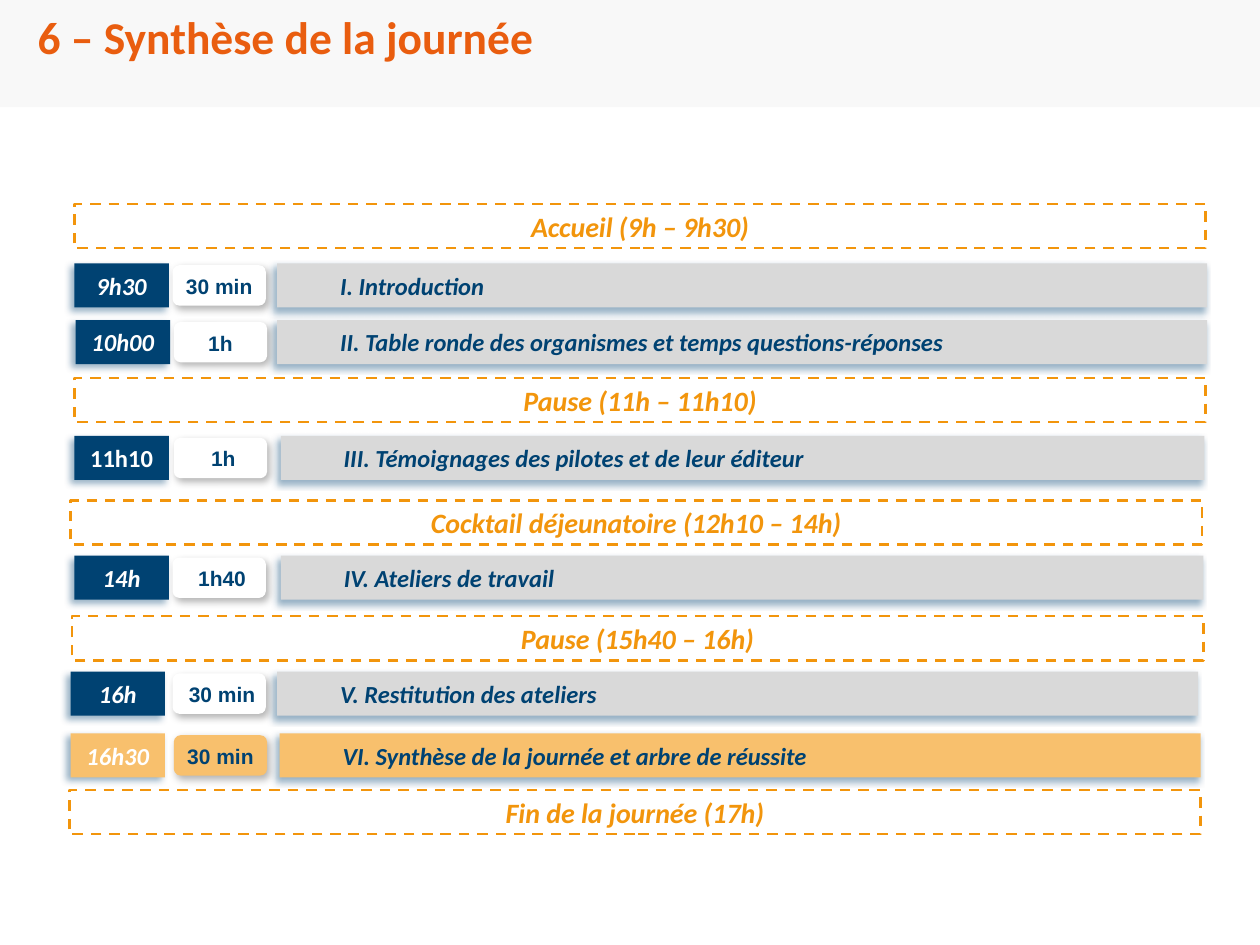
import pptx
import pptx.util
import pptx.dml.color
import pptx.enum.dml
import pptx.enum.shapes
import pptx.enum.text
import pptx.oxml
import pptx.oxml.ns

Inches, Pt = pptx.util.Inches, pptx.util.Pt
RGBColor = pptx.dml.color.RGBColor
SHAPES = pptx.enum.shapes.MSO_SHAPE
ALIGN = pptx.enum.text.PP_ALIGN
ANCHOR = pptx.enum.text.MSO_ANCHOR

NAVY = RGBColor(0x00, 0x42, 0x72)
AMBER = RGBColor(0xF2, 0x95, 0x0C)
PEACH = RGBColor(0xF8, 0xC0, 0x6D)
ORANGE = RGBColor(0xE9, 0x5D, 0x0F)
GREY = RGBColor(0xD9, 0xD9, 0xD9)
PALE = RGBColor(0xF8, 0xF8, 0xF8)
WHITE = RGBColor(0xFF, 0xFF, 0xFF)
BLACK = RGBColor(0x00, 0x00, 0x00)

# Content
TITLE = "6 – Synthèse de la journée"
# left, top, label
BREAKS = [
    (0.59, 1.62, "Accueil (9h – 9h30)"),
    (0.59, 3.00, "Pause (11h – 11h10)"),
    (0.56, 3.97, "Cocktail déjeunatoire (12h10 – 14h)"),
    (0.57, 4.89, "Pause (15h40 – 16h)"),
    (0.55, 6.27, "Fin de la journée (17h)"),
]
# top, (left, start time), (left, duration), (left, right, topic)
SESSIONS = [
    (2.09, (0.59, "9h30"), (1.37, "30 min"), (2.20, 9.58, "I. Introduction")),
    (2.54, (0.60, "10h00"), (1.38, "1h"),
     (2.20, 9.58, "II. Table ronde des organismes et temps questions-réponses")),
    (3.46, (0.59, "11h10"), (1.38, " 1h"),
     (2.23, 9.56, "III. Témoignages des pilotes et de leur éditeur")),
    (4.41, (0.59, "14h"), (1.37, " 1h40"), (2.23, 9.55, "IV. Ateliers de travail")),
    (5.33, (0.56, "16h"), (1.37, " 30 min"), (2.20, 9.51, "V. Restitution des ateliers")),
    (5.82, (0.56, "16h30"), (1.38, "30 min"),
     (2.22, 9.53, "VI. Synthèse de la journée et arbre de réussite")),
]
CURRENT = "16h30"
UPRIGHT = "11h10"

# Sizes in inches; shadows as colour, opacity %, blur pt, distance pt, angle
ROW_H, PILL_H = 0.35, 0.32
BREAK_W, TIME_W, PILL_W = 8.98, 0.75, 0.74
NAVY_SHADOW = (NAVY, 40, 4, 3, 135)
SOFT_SHADOW = (BLACK, 30, 4.5, 2.6, 53)

deck = pptx.Presentation()
deck.slide_width, deck.slide_height = Inches(10), Inches(7.5)
page = deck.slides.add_slide(deck.slide_layouts[6])


def add_block(left, top, width, height, fill=None, shadow=None, kind=SHAPES.RECTANGLE):
    box = page.shapes.add_shape(kind, *map(Inches, (left, top, width, height)))
    if fill is None:
        box.fill.background()
    else:
        box.fill.solid()
        box.fill.fore_color.rgb = fill
    box.line.fill.background()
    box.shadow.inherit = False
    if shadow:
        color, opacity, blur, distance, angle = shadow
        effects = box._element.spPr.find(pptx.oxml.ns.qn("a:effectLst"))
        effects.append(pptx.oxml.parse_xml(
            f'<a:outerShdw {pptx.oxml.ns.nsdecls("a")} blurRad="{Pt(blur)}" '
            f'dist="{Pt(distance)}" dir="{angle * 60000}" algn="ctr" rotWithShape="0">'
            f'<a:srgbClr val="{color}"><a:alpha val="{opacity * 1000}"/></a:srgbClr>'
            '</a:outerShdw>'))
    return box


def write(box, text, size, color, font="Calibri", italic=True, align=ALIGN.CENTER,
          anchor=ANCHOR.MIDDLE, wrap=True, after=3):
    box.text_frame.word_wrap = wrap
    box.text_frame.vertical_anchor = anchor
    para = box.text_frame.paragraphs[0]
    para.text = text
    para.alignment = align
    para.space_after = Pt(after)
    para.font.name, para.font.size = font, Pt(size)
    para.font.bold, para.font.italic = True, italic
    para.font.color.rgb = color
    return para


# Header band and title
add_block(0, 0, 10, 0.85, PALE)
title = page.shapes.add_textbox(*map(Inches, (0.2, 0.09, 9.62, 0.79)))
write(title, TITLE, 26, ORANGE, italic=False, align=ALIGN.LEFT,
      anchor=ANCHOR.TOP, after=0).line_spacing = 0.85

# Dashed frames for the breaks
for left, top, label in BREAKS:
    frame = add_block(left, top, BREAK_W, ROW_H)
    frame.line.color.rgb = AMBER
    frame.line.width = Pt(1.5)
    frame.line.dash_style = pptx.enum.dml.MSO_LINE.DASH
    write(frame, label, 16, AMBER)

# Sessions: start time, duration, topic
for top, (time_left, time), (pill_left, duration), (left, right, topic) in SESSIONS:
    current = time == CURRENT
    clock = add_block(time_left, top, TIME_W, ROW_H, PEACH if current else NAVY, NAVY_SHADOW)
    write(clock, time, 14, WHITE, italic=time != UPRIGHT)

    bar = add_block(left, top, right - left, ROW_H, PEACH if current else GREY, NAVY_SHADOW)
    para = write(bar, topic, 14, NAVY, align=ALIGN.LEFT)
    para._p.get_or_add_pPr().set("marL", str(Inches(0.4)))

    pill = add_block(pill_left, top + (ROW_H - PILL_H) / 2, PILL_W, PILL_H,
                     PEACH if current else WHITE, SOFT_SHADOW, SHAPES.ROUNDED_RECTANGLE)
    write(pill, duration, 12, NAVY, "Arial", italic=False, anchor=ANCHOR.TOP,
          wrap=False, after=0)

deck.save("out.pptx")
